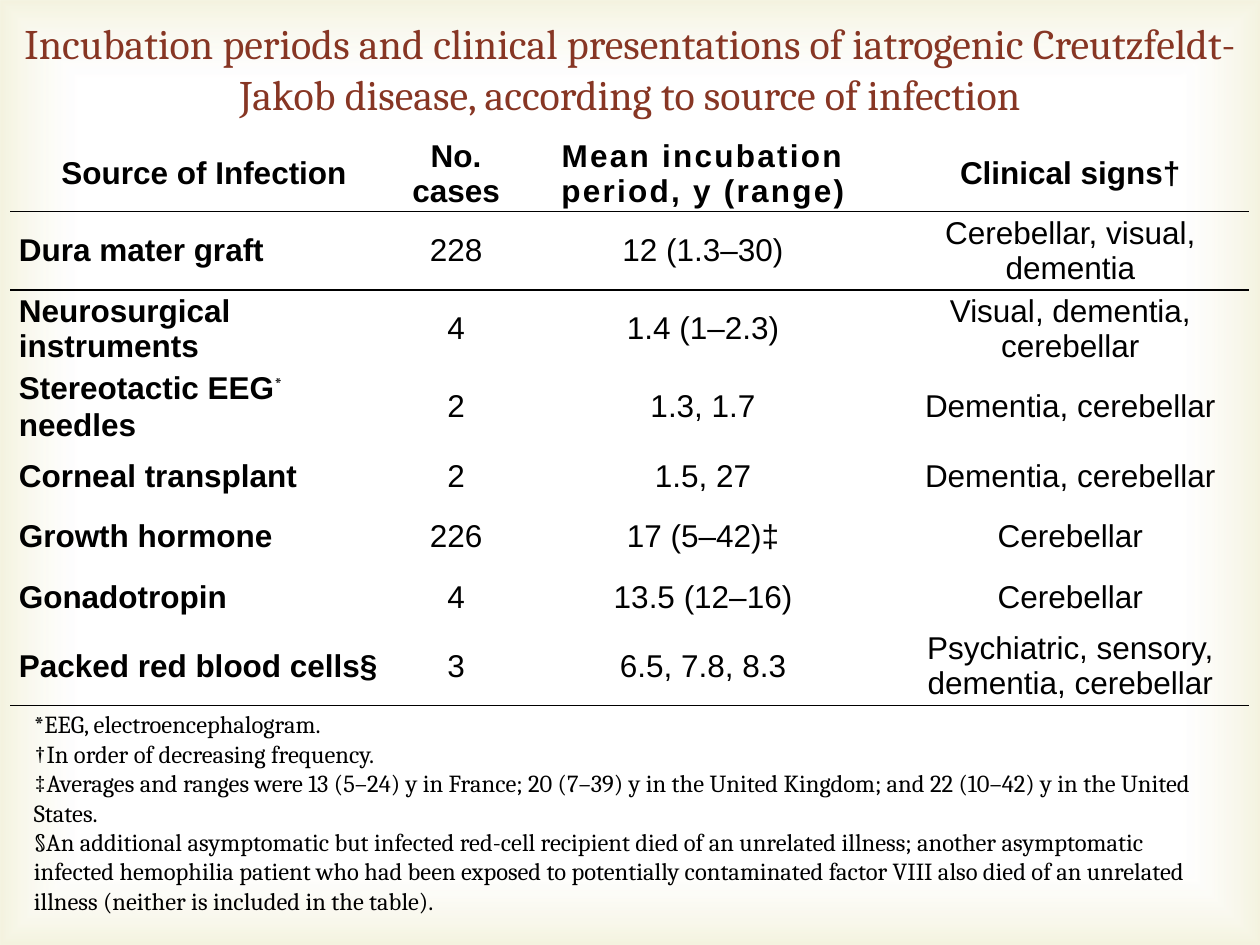
from lxml import etree
from pptx import Presentation
from pptx.dml.color import RGBColor
from pptx.enum.shapes import MSO_SHAPE
from pptx.enum.text import MSO_ANCHOR, PP_ALIGN
from pptx.oxml import parse_xml
from pptx.oxml.ns import nsdecls, qn
from pptx.util import Inches, Pt

RECTANGLE = MSO_SHAPE.RECTANGLE
LEFT, CENTER = PP_ALIGN.LEFT, PP_ALIGN.CENTER
TOP, MIDDLE = MSO_ANCHOR.TOP, MSO_ANCHOR.MIDDLE
BLACK = RGBColor(0x00, 0x00, 0x00)
WHITE = RGBColor(0xFF, 0xFF, 0xFF)
RUST = RGBColor(0x87, 0x36, 0x24)
KHAKI = RGBColor(0xD1, 0xCA, 0x75)
NO_STYLE = "{2D5ABB26-0587-4C30-8999-92F81FD0307C}"

TITLE = ("Incubation periods and clinical presentations of iatrogenic "
         "Creutzfeldt-Jakob disease, according to source of infection")
NOTES = [
    "*EEG, electroencephalogram.",
    "†In order of decreasing frequency.",
    "‡Averages and ranges were 13 (5–24) y in France; 20 (7–39) y in the "
    "United Kingdom; and 22 (10–42) y in the United States.",
    "§An additional asymptomatic but infected red-cell recipient died of an "
    "unrelated illness; another asymptomatic infected hemophilia patient who "
    "had been exposed to potentially contaminated factor VIII also died of an "
    "unrelated illness (neither is included in the table).",
]
ROWS = [
    ("Source of Infection", "No. cases", "Mean incubation period, y (range)",
     "Clinical signs†"),
    ("Dura mater graft", "228", "12 (1.3–30)", "Cerebellar, visual, dementia"),
    ("Neurosurgical instruments", "4", "1.4 (1–2.3)",
     "Visual, dementia, cerebellar"),
    ("Stereotactic EEG* needles", "2", "1.3, 1.7", "Dementia, cerebellar"),
    ("Corneal transplant", "2", "1.5, 27", "Dementia, cerebellar"),
    ("Growth hormone", "226", "17 (5–42)‡", "Cerebellar"),
    ("Gonadotropin", "4", "13.5 (12–16)", "Cerebellar"),
    ("Packed red blood cells§", "3", "6.5, 7.8, 8.3",
     "Psychiatric, sensory, dementia, cerebellar"),
]
COLUMN_WIDTHS = [3.08, 0.92, 3, 2.83]
ROW_HEIGHTS = [0.59, 0.62, 0.62, 0.62, 0.48, 0.48, 0.48, 0.62]
MEAN_COLUMN = 2
ROW_BORDERS = {0: "lnB", 1: "lnT", len(ROWS) - 1: "lnB"}


def add_span(para, text, font="Arial", size=18, color=BLACK, bold=False,
             spacing=0, baseline=0):
    span = para.add_run()
    span.text = text
    span.font.name = font
    span.font.size = Pt(size)
    span.font.color.rgb = color
    span.font.bold = bold
    properties = span.font._element
    if spacing:
        properties.set("spc", str(round(spacing * 100)))
    if baseline:
        properties.set("baseline", str(baseline * 1000))


def add_text(page, left, top, width, height, lines, align=LEFT, anchor=TOP,
             **style):
    box = page.shapes.add_textbox(Inches(left), Inches(top), Inches(width),
                                  Inches(height))
    frame = box.text_frame
    frame.word_wrap = True
    frame.vertical_anchor = anchor
    para = frame.paragraphs[0]
    para.alignment = align
    for number, line in enumerate(lines):
        if number:
            para.add_line_break()
        add_span(para, line, **style)


def add_glow(page, width, height):
    box = page.shapes.add_shape(RECTANGLE, 0, 0, width, height)
    box.shadow.inherit = False
    box.line.fill.background()
    box.fill.background()
    stops = "".join(
        f'<a:gs pos="{place * 1000}"><a:srgbClr val="{color}">'
        f'<a:alpha val="{alpha * 1000}"/></a:srgbClr></a:gs>'
        for place, color, alpha in [(83, WHITE, 11), (100, KHAKI, 23)])
    gradient = parse_xml(
        f'<a:gradFill {nsdecls("a")} rotWithShape="1"><a:gsLst>{stops}</a:gsLst>'
        '<a:path path="rect"><a:fillToRect l="50000" t="50000" r="50000" '
        'b="50000"/></a:path></a:gradFill>')
    properties = box._element.spPr
    properties.replace(properties.find(qn("a:noFill")), gradient)


def add_border(cell, side):
    border = etree.Element(qn(f"a:{side}"), w=str(Pt(1)))
    fill = etree.SubElement(border, qn("a:solidFill"))
    etree.SubElement(fill, qn("a:srgbClr"), val=str(BLACK))
    cell._tc.get_or_add_tcPr().insert(0, border)


def fill_cell(cell, text, align, **style):
    cell.fill.background()
    cell.vertical_anchor = MIDDLE
    cell.margin_left = cell.margin_right = Inches(0.07)
    cell.margin_top = cell.margin_bottom = 0
    para = cell.text_frame.paragraphs[0]
    para.alignment = align
    before, mark, after = text.partition("* ")
    add_span(para, before, **style)
    if mark:
        add_span(para, mark, font="Cambria", baseline=30)
        add_span(para, after, **style)


def add_cases_table(page):
    frame = page.shapes.add_table(
        len(ROWS), len(COLUMN_WIDTHS), Inches(0.08), Inches(1.08),
        Inches(sum(COLUMN_WIDTHS)), Inches(sum(ROW_HEIGHTS)))
    table = frame.table
    table.first_row = table.horz_banding = False
    table._tbl.tblPr.find(qn("a:tableStyleId")).text = NO_STYLE
    for column, width in zip(table.columns, COLUMN_WIDTHS):
        column.width = Inches(width)
    for row, height in zip(table.rows, ROW_HEIGHTS):
        row.height = Inches(height)
    for r, texts in enumerate(ROWS):
        for c, text in enumerate(texts):
            cell = table.cell(r, c)
            header, label = r == 0, c == 0
            fill_cell(cell, text, LEFT if label and not header else CENTER,
                      bold=header or label,
                      spacing=1.3 if header and c == MEAN_COLUMN else 0)
            if r in ROW_BORDERS:
                add_border(cell, ROW_BORDERS[r])


def main():
    deck = Presentation()
    deck.slide_width, deck.slide_height = Inches(10), Inches(7.5)
    page = deck.slides.add_slide(deck.slide_layouts[6])
    add_glow(page, deck.slide_width, deck.slide_height)
    add_text(page, 0, 0, 10, 1.08, [TITLE], align=CENTER, anchor=MIDDLE,
             font="Cambria", size=24, color=RUST)
    add_cases_table(page)
    add_text(page, 0.17, 5.58, 9.58, 1.75, NOTES, font="Cambria", size=14)
    deck.save("out.pptx")


if __name__ == "__main__":
    main()
